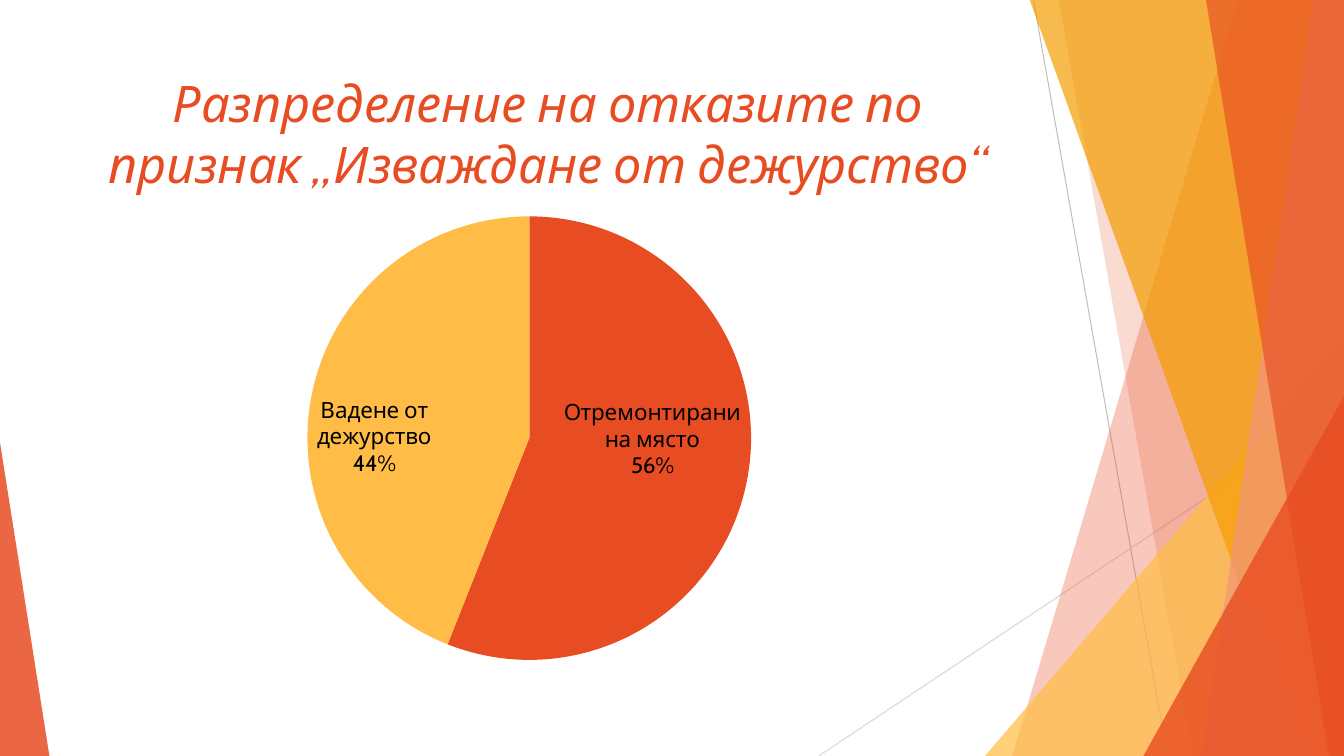
"""Build a slide with a pie chart of failures by removal from duty."""
from lxml import etree
from pptx import Presentation
from pptx.chart.data import CategoryChartData
from pptx.dml.color import RGBColor
from pptx.enum.chart import XL_CHART_TYPE, XL_LABEL_POSITION
from pptx.enum.shapes import MSO_CONNECTOR, MSO_SHAPE
from pptx.enum.text import MSO_ANCHOR, MSO_AUTO_SIZE, PP_ALIGN
from pptx.oxml import parse_xml
from pptx.oxml.ns import nsdecls, qn
from pptx.util import Pt

PIE = XL_CHART_TYPE.PIE
INSIDE_END = XL_LABEL_POSITION.INSIDE_END
STRAIGHT = MSO_CONNECTOR.STRAIGHT
TRIANGLE = MSO_SHAPE.ISOSCELES_TRIANGLE
TOP = MSO_ANCHOR.TOP
NO_FIT = MSO_AUTO_SIZE.NONE
CENTER = PP_ALIGN.CENTER

PX = 9144
WIDTH, HEIGHT = 1333, 750
FONT = "Cabin"
RED = RGBColor(0xE8, 0x4C, 0x22)
YELLOW = RGBColor(0xFF, 0xBD, 0x47)
AMBER = RGBColor(0xF4, 0x9D, 0x00)
SALMON = RGBColor(0xF1, 0x94, 0x7A)
GRAY = RGBColor(0xBF, 0xBF, 0xBF)
LIGHT_GRAY = RGBColor(0xD9, 0xD9, 0xD9)
BLACK = RGBColor(0, 0, 0)

TITLE = "Разпределение на отказите по признак „Изваждане от дежурство“"
TITLE_BOX = (74, 67, 940, 144)
CHART_BOX = (74, 200, 911, 489)
PIE_LAYOUT = {"x": 0.25, "y": 0.03, "w": 0.49, "h": 0.9}
SLICES = [("Отремонтирани на място", 56, RED), ("Вадене от дежурство", 44, YELLOW)]
LINES = [((1025, 0), (1158, 750), GRAY), ((1333, 403), (812, 750), LIGHT_GRAY)]
FACETS = [
    ("band", (1228, 1004), RED, 30),
    ("band", (1050, 1183), RED, 20),
    ("triangle", (977, 333, 356, 417, 1), YELLOW, 72),
    ("band", (1021, 1291), AMBER, 70),
    ("band", (1303, 1192), SALMON, 70),
    ("band", (1196, 1318), RED, 65),
    ("triangle", (1134, 393, 199, 357, 1), RED, 80),
    ("triangle", (0, 439, 49, 311, 0), RED, 85),
]


def emu(lengths):
    return [length * PX for length in lengths]


def add_line(slide, start, end, color):
    line = slide.shapes.add_connector(STRAIGHT, *emu(start + end))
    line.line.color.rgb = color
    line.line.width = Pt(0.75)
    etree.SubElement(line._element.spPr, qn("a:effectLst"))


def add_facet(slide, kind, geometry, color, opacity):
    if kind == "band":
        top_x, bottom_x = geometry
        builder = slide.shapes.build_freeform(top_x, -1, scale=PX)
        builder.add_line_segments([(WIDTH, -1), (WIDTH, HEIGHT), (bottom_x, HEIGHT)])
        shape = builder.convert_to_shape()
    else:
        *box, apex = geometry
        shape = slide.shapes.add_shape(TRIANGLE, *emu(box))
        shape.adjustments[0] = apex
    shape.shadow.inherit = False
    shape.fill.solid()
    shape.fill.fore_color.rgb = color
    shape.line.fill.background()
    color_element = shape._element.spPr.find(".//" + qn("a:srgbClr"))
    etree.SubElement(color_element, qn("a:alpha"), val=str(opacity * 1000))


def format_title(slide):
    title = slide.shapes.title
    title.left, title.top, title.width, title.height = emu(TITLE_BOX)
    frame = title.text_frame
    frame.text = TITLE
    frame.word_wrap = True
    frame.auto_size = NO_FIT
    frame.vertical_anchor = TOP
    paragraph = frame.paragraphs[0]
    paragraph.alignment = CENTER
    paragraph.font.name = FONT
    paragraph.font.size = Pt(36)
    paragraph.font.italic = True
    paragraph.font.color.rgb = RED


def add_pie(slide):
    data = CategoryChartData()
    data.categories = [name for name, value, color in SLICES]
    data.add_series("Series 1", [value for name, value, color in SLICES])
    chart = slide.shapes.add_chart(PIE, *emu(CHART_BOX), data).chart
    chart.has_legend = False
    chart.has_title = False
    chart.font.name = FONT
    chart.font.size = Pt(10)
    chart.font.color.rgb = BLACK
    plot = chart.plots[0]
    plot.vary_by_categories = True
    for index, (name, value, color) in enumerate(SLICES):
        slice_format = plot.series[0].points[index].format
        slice_format.fill.solid()
        slice_format.fill.fore_color.rgb = color
        slice_format.line.fill.background()
    plot.has_data_labels = True
    labels = plot.data_labels
    labels.show_category_name = True
    labels.show_percentage = True
    labels.show_value = False
    labels.number_format = "0%"
    labels.number_format_is_linked = False
    labels.position = INSIDE_END
    labels.font.name = FONT
    labels.font.size = Pt(16)
    labels.font.color.rgb = BLACK
    separator = etree.SubElement(labels._element, qn("c:separator"))
    separator.text = "\n"
    labels._element.find(qn("c:showBubbleSize")).addnext(separator)
    place_plot(chart)


def place_plot(chart):
    plot_area = chart._chartSpace.chart.plotArea
    for layout in plot_area.findall(qn("c:layout")):
        plot_area.remove(layout)
    sizes = "".join(f'<c:{key} val="{value}"/>' for key, value in PIE_LAYOUT.items())
    plot_area.insert(0, parse_xml(
        f'<c:layout {nsdecls("c")}><c:manualLayout><c:layoutTarget val="inner"/>'
        f'<c:xMode val="edge"/><c:yMode val="edge"/>{sizes}</c:manualLayout></c:layout>'))


def main():
    presentation = Presentation()
    presentation.slide_width, presentation.slide_height = emu((WIDTH, HEIGHT))
    slide = presentation.slides.add_slide(presentation.slide_layouts[5])
    for line in LINES:
        add_line(slide, *line)
    for facet in FACETS:
        add_facet(slide, *facet)
    format_title(slide)
    add_pie(slide)
    presentation.save("out.pptx")


if __name__ == "__main__":
    main()
